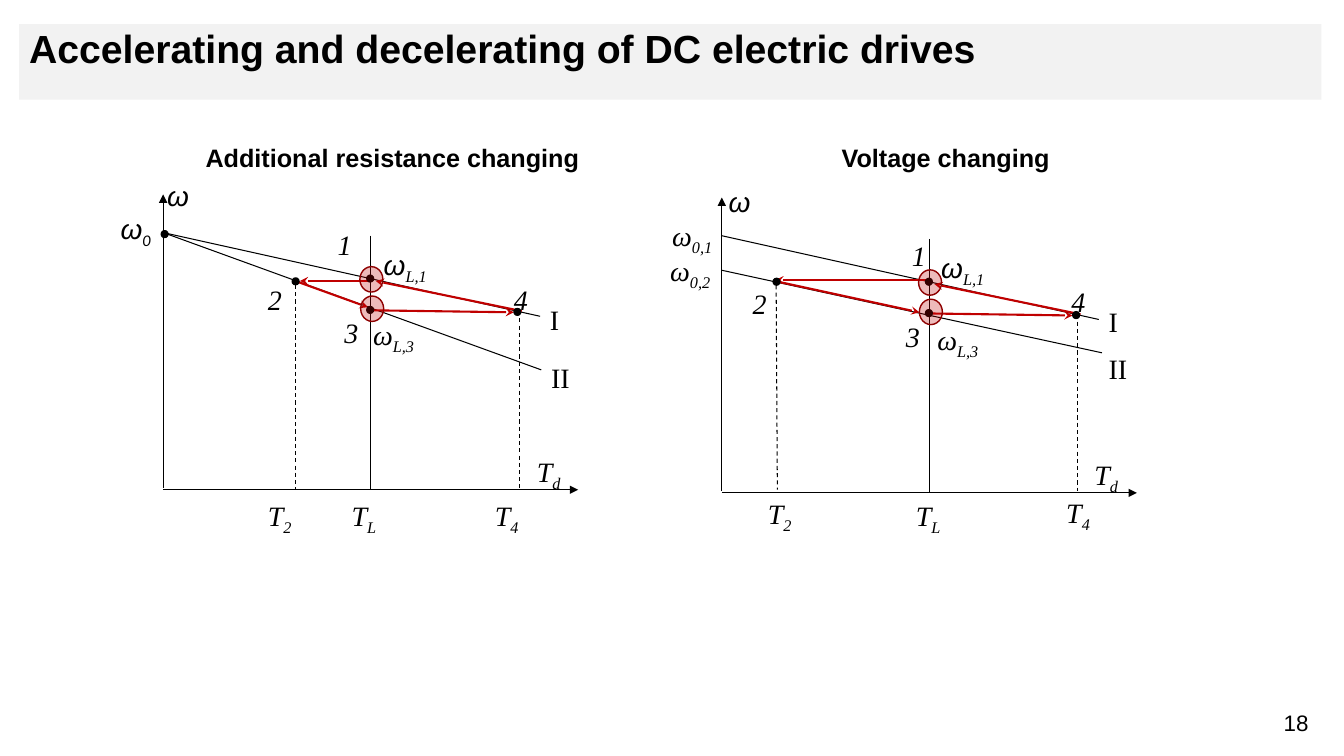
"""Build the slide on accelerating and decelerating of DC electric drives."""
from dataclasses import dataclass

from lxml import etree
from pptx import Presentation
from pptx import util as u
from pptx.dml.color import RGBColor
from pptx.enum import dml, shapes, text
from pptx.oxml import ns


@dataclass(frozen=True)
class Theme:
    ink: RGBColor = RGBColor(0, 0, 0)
    band: RGBColor = RGBColor(0xF2, 0xF2, 0xF2)
    path_red: RGBColor = RGBColor(0xC0, 0, 0)
    halo_edge: RGBColor = RGBColor(0x8E, 0, 0)
    sans: str = "Arial"
    serif: str = "Times New Roman"
    small: str = "Calibri"
    title_size: int = 28
    heading_size: int = 18
    label_size: int = 20
    number_size: int = 16


theme = Theme()
SANS, SERIF, SMALL = theme.sans, theme.serif, theme.small

presentation = Presentation()
presentation.slide_width, presentation.slide_height = u.Cm(33.87), u.Cm(19.05)
slide = presentation.slides.add_slide(presentation.slide_layouts[5])


def add_text(box, runs, size, bold=False, italic=False):
    """Write (words, font, is_subscript) runs into a text box and return its paragraph."""
    box.text_frame.word_wrap = True
    paragraph = box.text_frame.paragraphs[0]
    for words, font_name, is_subscript in runs:
        run = paragraph.add_run()
        run.text = words
        run.font.name = font_name
        run.font.size = u.Pt(size)
        run.font.bold, run.font.italic = bold, italic
        run.font.color.rgb = theme.ink
        if is_subscript:
            run._r.get_or_add_rPr().set("baseline", "-25000")
    return paragraph


def add_line(origin, start, end, color, width, head=None, dashed=False):
    """Draw a line between two (torque, speed) points measured from the origin."""
    connector = slide.shapes.add_connector(
        shapes.MSO_CONNECTOR.STRAIGHT,
        u.Cm(origin[0] + start[0]), u.Cm(origin[1] - start[1]),
        u.Cm(origin[0] + end[0]), u.Cm(origin[1] - end[1]))
    connector.line.color.rgb = color
    connector.line.width = u.Pt(width)
    if dashed:
        connector.line.dash_style = dml.MSO_LINE.DASH
    if head:
        etree.SubElement(connector.line._get_or_add_ln(), ns.qn("a:tailEnd"), type=head)
    etree.SubElement(connector._element.spPr, ns.qn("a:effectLst"))


title = slide.shapes.title
title.left, title.top, title.width, title.height = u.Cm(0.48), u.Cm(0.61), u.Cm(32.82), u.Cm(1.9)
title.fill.solid()
title.fill.fore_color.rgb = theme.band
title.text_frame.auto_size = text.MSO_AUTO_SIZE.NONE
title.text_frame.vertical_anchor = text.MSO_ANCHOR.TOP
paragraph = add_text(title, [("Accelerating and decelerating of DC electric drives", SANS, False)],
                     theme.title_size, bold=True)
paragraph.alignment = text.PP_ALIGN.LEFT
paragraph.line_spacing = 0.9

panels = [
    {
        "heading": ("Additional resistance changing", 4.93, 10.59),
        "origin": (4.11, 12.34),
        "curve_two": ((0, 6.48), (9.53, 3.02)),
        "paths": [((5.23, 5.26), (3.45, 5.26)), ((3.33, 5.26), (5.16, 4.6))],
        "dashed": ((3.33, 5.16), (3.33, 0)),
        "dots": [(3.34, 5.25), (0.04, 6.44)],
        "labels": [
            ("ω", "L,3", 9.3, 7.85, 1.24, SERIF, SERIF),
            ("T", "d", 13.28, 11.18, 1.42, SERIF, SERIF),
            ("T", "4", 12.22, 12.29, 1.9, SERIF, SERIF),
            ("T", "2", 6.5, 12.29, 1.9, SERIF, SERIF),
            ("T", "L", 8.61, 12.29, 1.9, SERIF, SERIF),
            ("I", "", 13.61, 7.37, 1.45, SERIF, SERIF),
            ("II", "", 13.64, 8.84, 1.45, SERIF, SERIF),
            ("1", "", 8.26, 5.49, 0.97, SERIF, SERIF),
            ("2", "", 6.5, 6.86, 1.42, SERIF, SERIF),
            ("3", "", 8.43, 7.7, 1.42, SERIF, SERIF),
            ("4", "", 12.7, 6.86, 1.42, SERIF, SERIF),
            ("ω", "L,1", 9.42, 5.97, 1.9, SANS, SERIF),
            ("ω", "", 3.96, 4.24, 1.9, SANS, SERIF),
            ("ω", "0", 2.79, 5.05, 1.9, SANS, SMALL),
        ],
    },
    {
        "heading": ("Voltage changing", 20.96, 6.07),
        "origin": (18.19, 12.42),
        "curve_two": ((0, 5.61), (9.58, 3.53)),
        "paths": [((5.23, 5.36), (1.35, 5.36)), ((1.47, 5.31), (4.98, 4.55))],
        "dashed": ((1.37, 5.23), (1.4, 0.08)),
        "dots": [(1.38, 5.32)],
        "labels": [
            ("ω", "L,3", 23.52, 7.98, 1.24, SERIF, SERIF),
            ("T", "d", 27.33, 11.25, 1.42, SERIF, SERIF),
            ("T", "4", 26.62, 12.22, 1.9, SERIF, SERIF),
            ("T", "2", 19.1, 12.24, 1.9, SERIF, SERIF),
            ("T", "L", 22.83, 12.29, 1.9, SERIF, SERIF),
            ("I", "", 27.69, 7.42, 1.45, SERIF, SERIF),
            ("II", "", 27.69, 8.61, 1.45, SERIF, SERIF),
            ("1", "", 22.73, 5.77, 0.97, SERIF, SERIF),
            ("2", "", 18.72, 6.96, 1.42, SERIF, SERIF),
            ("3", "", 22.58, 7.8, 1.42, SERIF, SERIF),
            ("4", "", 26.75, 6.93, 1.42, SERIF, SERIF),
            ("ω", "L,1", 23.47, 6.05, 1.9, SANS, SERIF),
            ("ω", "", 18.11, 4.39, 1.9, SANS, SERIF),
            ("ω", "0,1", 16.69, 5.23, 1.9, SERIF, SERIF),
            ("ω", "0,2", 16.64, 6.12, 1.9, SERIF, SERIF),
        ],
    },
]
axes = [((0, 0.05), (0, 7.44)), ((0, 0), (10.46, 0))]
curve_one = ((0, 6.48), (9.5, 4.37))
load_line = ((5.23, 6.4), (5.23, 0))
shared_paths = [((5.31, 4.52), (8.84, 4.47)), ((9.04, 4.5), (5.36, 5.26))]
shared_dashed = ((8.97, 4.5), (8.97, 0.05))
shared_dots = [(5.22, 5.32), (5.22, 4.53), (8.93, 4.48)]
halos = [(5.25, 5.3), (5.27, 4.56)]

for panel in panels:
    origin = panel["origin"]
    heading, left, width = panel["heading"]
    box = slide.shapes.add_textbox(u.Cm(left), u.Cm(3.45), u.Cm(width), u.Cm(1.02))
    add_text(box, [(heading, SANS, False)], theme.heading_size, bold=True)

    for symbol, subscript, left, top, width, symbol_font, subscript_font in panel["labels"]:
        is_tight = subscript == "L,3"
        box = slide.shapes.add_textbox(u.Cm(left), u.Cm(top), u.Cm(width),
                                       u.Cm(0.94 if is_tight else 1.47))
        runs = [(symbol, symbol_font, False)]
        if subscript:
            runs.append((subscript, subscript_font, True))
        paragraph = add_text(box, runs, theme.label_size, italic=symbol not in ("I", "II"))
        paragraph.line_spacing = 1.15
        paragraph.space_after = u.Pt(10)
        if is_tight:
            paragraph.alignment = text.PP_ALIGN.CENTER
            frame = box.text_frame
            frame.margin_left = frame.margin_right = frame.margin_top = frame.margin_bottom = 0

    for start, end in axes:
        add_line(origin, start, end, theme.ink, 0.75, head="triangle")
    for start, end in (curve_one, panel["curve_two"], load_line):
        add_line(origin, start, end, theme.ink, 0.75)
    for start, end in panel["paths"] + shared_paths:
        add_line(origin, start, end, theme.path_red, 1.5, head="stealth")
    for start, end in (panel["dashed"], shared_dashed):
        add_line(origin, start, end, theme.ink, 0.75, dashed=True)

    ellipses = [(dot, 0.18, 0.18, theme.ink, theme.ink, 0.75) for dot in shared_dots + panel["dots"]]
    ellipses += [(halo, 0.58, 0.64, theme.path_red, theme.halo_edge, 1) for halo in halos]
    for (torque, speed), width, height, fill, edge, edge_width in ellipses:
        shape = slide.shapes.add_shape(
            shapes.MSO_SHAPE.OVAL, u.Cm(origin[0] + torque - width / 2),
            u.Cm(origin[1] - speed - height / 2), u.Cm(width), u.Cm(height))
        shape.shadow.inherit = False
        shape.fill.solid()
        shape.fill.fore_color.rgb = fill
        shape.line.color.rgb = edge
        shape.line.width = u.Pt(edge_width)
        if fill == theme.path_red:
            color = shape._element.spPr.find(ns.qn("a:solidFill"))[0]
            etree.SubElement(color, ns.qn("a:alpha"), val="27000")

box = slide.shapes.add_textbox(u.Cm(31.85), u.Cm(17.75), u.Cm(1.63), u.Cm(0.94))
paragraph = add_text(box, [("18", SANS, False)], theme.number_size)
paragraph.alignment = text.PP_ALIGN.CENTER

presentation.save("out.pptx")
